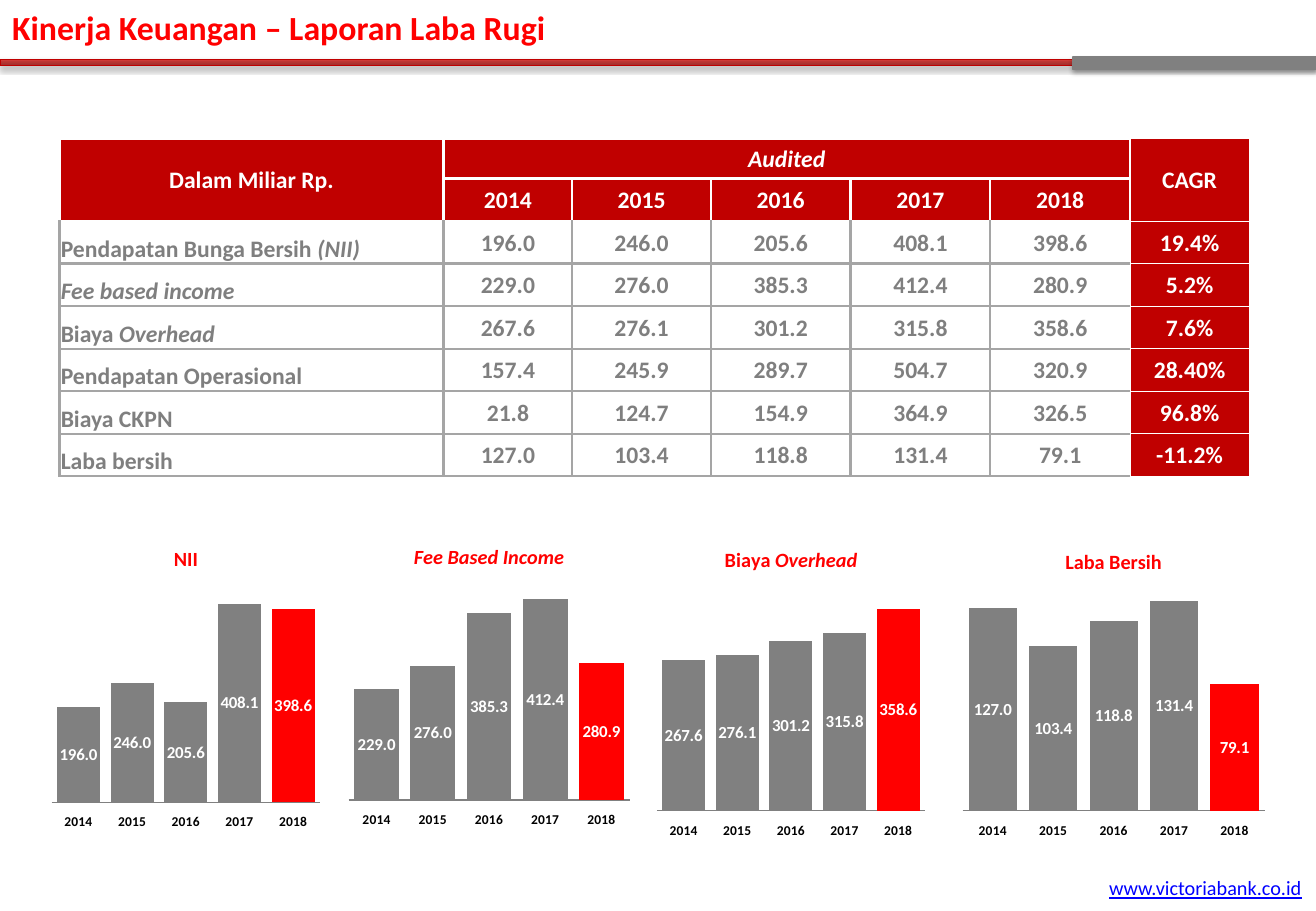
from lxml import etree
from pptx import Presentation
from pptx.chart.data import CategoryChartData
from pptx.dml.color import RGBColor
from pptx.enum.chart import XL_CHART_TYPE, XL_LABEL_POSITION, XL_TICK_LABEL_POSITION, XL_TICK_MARK
from pptx.enum.shapes import MSO_SHAPE
from pptx.enum.text import MSO_ANCHOR, PP_ALIGN
from pptx.oxml import parse_xml
from pptx.oxml.ns import nsdecls, qn
from pptx.util import Inches, Pt

CLUSTERED, STACKED = XL_CHART_TYPE.COLUMN_CLUSTERED, XL_CHART_TYPE.COLUMN_STACKED
LABEL_CENTER = XL_LABEL_POSITION.CENTER
TICKS_NONE, TICK_LABELS_LOW = XL_TICK_MARK.NONE, XL_TICK_LABEL_POSITION.LOW
RECTANGLE = MSO_SHAPE.RECTANGLE
TOP, MIDDLE, BOTTOM = MSO_ANCHOR.TOP, MSO_ANCHOR.MIDDLE, MSO_ANCHOR.BOTTOM
LEFT, CENTER, RIGHT = PP_ALIGN.LEFT, PP_ALIGN.CENTER, PP_ALIGN.RIGHT

FONT = "Calibri"
RED, DARK_RED, GRAY, TEXT_GRAY = "FF0000", "C00000", "808080", "7F7F7F"
WHITE, BLACK, BORDER_GRAY, BLUE = "FFFFFF", "000000", "A5A5A5", "0000FF"

TITLE = "Kinerja Keuangan – Laporan Laba Rugi"
WEBSITE = "www.victoriabank.co.id"
YEARS = ["2014", "2015", "2016", "2017", "2018"]
ROWS = [
    ([("Pendapatan Bunga Bersih ", False), ("(NII)", True)],
     [196.0, 246.0, 205.6, 408.1, 398.6], "19.4%"),
    ([("Fee based income", True)], [229.0, 276.0, 385.3, 412.4, 280.9], "5.2%"),
    ([("Biaya ", False), ("Overhead", True)],
     [267.6, 276.1, 301.2, 315.8, 358.6], "7.6%"),
    ([("Pendapatan Operasional", False)],
     [157.4, 245.9, 289.7, 504.7, 320.9], "28.40%"),
    ([("Biaya CKPN", False)], [21.8, 124.7, 154.9, 364.9, 326.5], "96.8%"),
    ([("Laba bersih", False)], [127.0, 103.4, 118.8, 131.4, 79.1], "-11.2%"),
]
COLUMN_WIDTHS = [3.16, 1.06, 1.14, 1.15, 1.15, 1.15, 0.98]
ROW_HEIGHTS = [0.33] + [0.35] * 7
CHARTS = [
    ([("NII", False)], 0, STACKED, 100, 450, (0.38, 4.36, 2.3, 2.48)),
    ([("Fee Based Income", True)], 1, CLUSTERED, -25, 450, (2.82, 4.34, 2.41, 2.48)),
    ([("Biaya ", False), ("Overhead", True)], 2, CLUSTERED, -25, 400,
     (5.36, 4.36, 2.3, 2.55)),
    ([("Laba Bersih", False)], 5, CLUSTERED, -25, 140, (7.87, 4.38, 2.59, 2.53)),
]
PLOT_LAYOUT = {"x": 0.02, "y": 0.18, "w": 0.96, "h": 0.73}


def color(value):
    return RGBColor.from_string(value)


def inches(box):
    return [Inches(length) for length in box]


def style_font(font, size, value, bold=True, italic=False):
    font.name, font.size, font.bold, font.italic = FONT, Pt(size), bold, italic
    font.color.rgb = color(value)


def write(text_frame, runs, size, value, alignment, bold=True):
    paragraph = text_frame.paragraphs[0]
    paragraph.alignment = alignment
    for text, italic in runs:
        run = paragraph.add_run()
        run.text = text
        style_font(run.font, size, value, bold, italic)
    return paragraph


def add_bar(slide, box, line_color):
    shape = slide.shapes.add_shape(RECTANGLE, *inches(box))
    shape.shadow.inherit = False
    shape.line.color.rgb = color(line_color)
    shape.line.width = Pt(0.75)
    effects = shape._element.spPr.find(qn("a:effectLst"))
    effects.append(parse_xml(
        f'<a:outerShdw {nsdecls("a")} blurRad="{Pt(3.1)}" dist="{Pt(1.8)}" dir="5400000" '
        f'rotWithShape="0"><a:srgbClr val="{BLACK}"><a:alpha val="35000"/></a:srgbClr>'
        '</a:outerShdw>'))
    return shape


def add_header(slide):
    red_bar = add_bar(slide, (0, 0.49, 10.83, 0.05), DARK_RED)
    red_bar.fill.gradient()
    red_bar.fill.gradient_angle = 90
    for stop, value in zip(red_bar.fill.gradient_stops, ("9C2F2D", "CE3B37")):
        stop.color.rgb = color(value)
    gray_bar = add_bar(slide, (8.83, 0.47, 2, 0.1), GRAY)
    gray_bar.fill.solid()
    gray_bar.fill.fore_color.rgb = color(GRAY)
    title = slide.shapes.title
    title.left, title.top, title.width, title.height = inches((0, 0, 6.85, 0.44))
    title.text_frame.vertical_anchor = MIDDLE
    write(title.text_frame, [(TITLE, False)], 20, RED, LEFT)


def set_borders(cell, borders):
    properties = cell._tc.get_or_add_tcPr()
    for index, (side, (value, width)) in enumerate(zip("LRTB", borders)):
        properties.insert(index, parse_xml(
            f'<a:ln{side} {nsdecls("a")} w="{Pt(width)}"><a:solidFill>'
            f'<a:srgbClr val="{value}"/></a:solidFill></a:ln{side}>'))


def cell_borders(row, column):
    thin, thick, gray = (WHITE, 0.5), (WHITE, 1.5), (BORDER_GRAY, 1.5)
    if column == 6:
        return [thin] * 4
    side = thick if row < 2 else gray
    right = thin if column == 5 and row != 1 else side
    top = thick if row <= 2 else gray
    return [side, right, top, side]


def add_results_table(slide):
    box = (0.49, 1.14, sum(COLUMN_WIDTHS), sum(ROW_HEIGHTS))
    table = slide.shapes.add_table(len(ROW_HEIGHTS), len(COLUMN_WIDTHS), *inches(box)).table
    table.first_row = table.horz_banding = False
    for column, width in zip(table.columns, COLUMN_WIDTHS):
        column.width = Inches(width)
    for row, height in zip(table.rows, ROW_HEIGHTS):
        row.height = Inches(height)
    for first, last in (((0, 0), (1, 0)), ((0, 1), (0, 5)), ((0, 6), (1, 6))):
        table.cell(*first).merge(table.cell(*last))
    contents = {(0, 0): [("Dalam Miliar Rp.", False)], (0, 1): [("Audited", True)],
                (0, 6): [("CAGR", False)]}
    for column, year in enumerate(YEARS, 1):
        contents[1, column] = [(year, False)]
    for row, (label, values, growth) in enumerate(ROWS, 2):
        contents[row, 0] = label
        for column, value in enumerate(values, 1):
            contents[row, column] = [(f"{value:.1f}", False)]
        contents[row, 6] = [(growth, False)]
    for row in range(len(ROW_HEIGHTS)):
        for column in range(len(COLUMN_WIDTHS)):
            cell = table.cell(row, column)
            is_red, is_label = row < 2 or column == 6, row >= 2 and column == 0
            cell.margin_left = cell.margin_right = cell.margin_top = Inches(0.01)
            cell.margin_bottom = 0
            cell.vertical_anchor = BOTTOM if is_label else MIDDLE
            if is_red:
                cell.fill.solid()
                cell.fill.fore_color.rgb = color(DARK_RED)
            else:
                cell.fill.background()
            set_borders(cell, cell_borders(row, column))
            if (row, column) in contents:
                write(cell.text_frame, contents[row, column], 14,
                      WHITE if is_red else TEXT_GRAY, LEFT if is_label else CENTER)


def place_plot(chart):
    plot_area = chart._chartSpace.chart.plotArea
    for layout in plot_area.findall(qn("c:layout")):
        plot_area.remove(layout)
    layout = etree.Element(qn("c:layout"))
    manual = etree.SubElement(layout, qn("c:manualLayout"))
    settings = [("layoutTarget", "inner"), ("xMode", "edge"), ("yMode", "edge")]
    for name, value in settings + list(PLOT_LAYOUT.items()):
        etree.SubElement(manual, qn(f"c:{name}")).set("val", str(value))
    plot_area.insert(0, layout)


def add_column_chart(slide, title, values, chart_type, overlap, maximum, box):
    data = CategoryChartData(number_format="0.0")
    data.categories = YEARS
    data.add_series("Series 1", values)
    chart = slide.shapes.add_chart(chart_type, *inches(box), data).chart
    style_font(chart.font, 10, BLACK, False)
    chart.has_legend = False
    chart.has_title = True
    write(chart.chart_title.text_frame, title, 12, RED, CENTER)
    place_plot(chart)
    value_axis, category_axis = chart.value_axis, chart.category_axis
    value_axis.minimum_scale, value_axis.maximum_scale = 0, maximum
    value_axis.has_major_gridlines = False
    value_axis.visible = False
    category_axis.major_tick_mark = category_axis.minor_tick_mark = TICKS_NONE
    category_axis.tick_label_position = TICK_LABELS_LOW
    category_axis.format.line.color.rgb = color(GRAY)
    style_font(category_axis.tick_labels.font, 8, BLACK)
    plot = chart.plots[0]
    plot.gap_width, plot.overlap, plot.vary_by_categories = 25, overlap, False
    series = plot.series[0]
    latest = series.points[len(YEARS) - 1]
    for part, value in ((series, GRAY), (latest, RED)):
        part.format.fill.solid()
        part.format.fill.fore_color.rgb = color(value)
    labels = series.data_labels
    labels.show_value = True
    labels.number_format, labels.number_format_is_linked = "0.0", False
    labels.position = LABEL_CENTER
    style_font(labels.font, 10, WHITE)


def main():
    presentation = Presentation()
    presentation.slide_width, presentation.slide_height = inches((10.83, 7.5))
    slide = presentation.slides.add_slide(presentation.slide_layouts[5])
    add_header(slide)
    add_results_table(slide)
    for title, row, chart_type, overlap, maximum, box in CHARTS:
        add_column_chart(slide, title, ROWS[row][1], chart_type, overlap, maximum, box)
    website = slide.shapes.add_textbox(*inches((7.34, 7.16, 3.47, 0.3))).text_frame
    website.word_wrap = True
    website.vertical_anchor = TOP
    write(website, [(WEBSITE, False)], 12, BLUE, RIGHT, False).runs[0].font.underline = True
    presentation.save("out.pptx")


if __name__ == "__main__":
    main()
